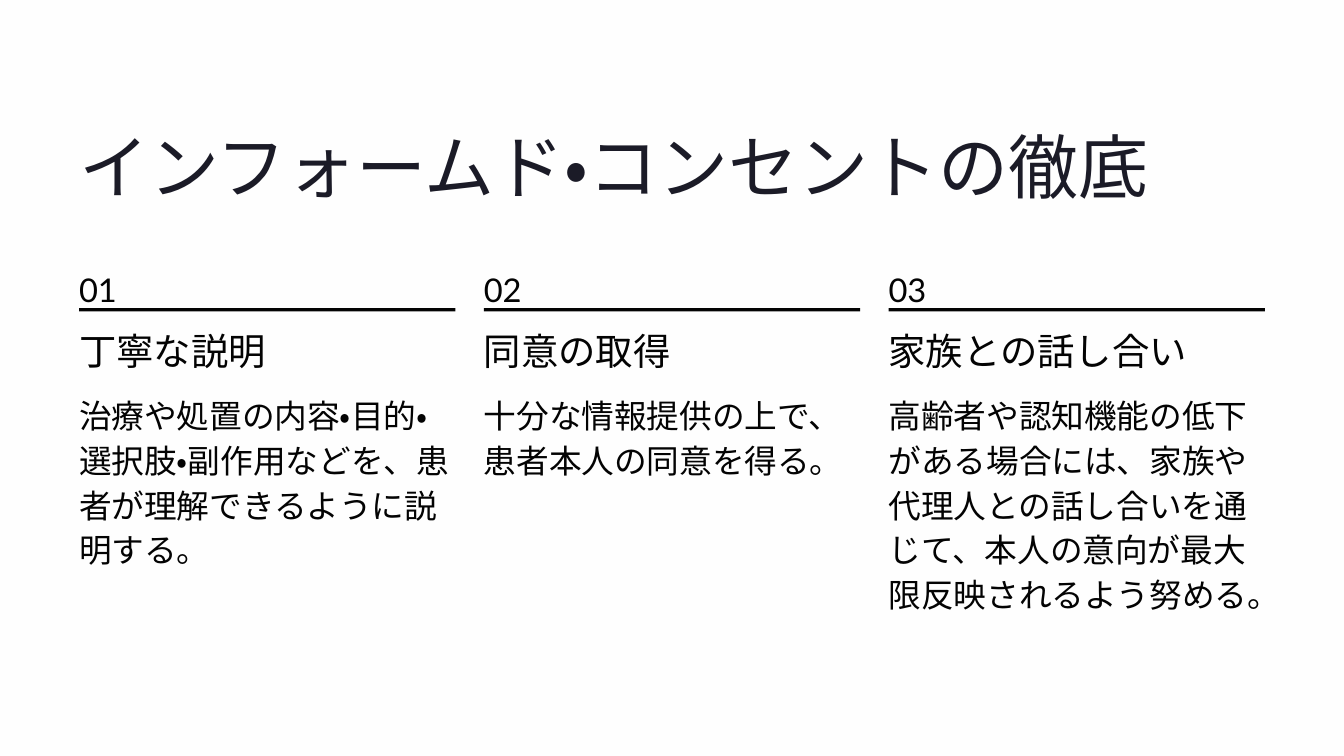
from pptx import Presentation
from pptx.dml.color import RGBColor
from pptx.enum.lang import MSO_LANGUAGE_ID
from pptx.enum.shapes import MSO_SHAPE
from pptx.enum.text import MSO_ANCHOR, MSO_AUTO_SIZE, PP_ALIGN
from pptx.util import Cm, Pt

RECTANGLE = MSO_SHAPE.RECTANGLE
TOP = MSO_ANCHOR.TOP
NO_FIT = MSO_AUTO_SIZE.NONE
LEFT = PP_ALIGN.LEFT
JAPANESE = MSO_LANGUAGE_ID.JAPANESE

# Content: heading, body, height of the body in lines
TITLE = "インフォームド・コンセントの徹底"
COLUMNS = [
    ("丁寧な説明",
     "治療や処置の内容・目的・選択肢・副作用などを、患者が理解できるように説明する。", 3),
    ("同意の取得",
     "十分な情報提供の上で、患者本人の同意を得る。", 2),
    ("家族との話し合い",
     "高齢者や認知機能の低下がある場合には、家族や代理人との話し合いを通じて、"
     "本人の意向が最大限反映されるよう努める。", 5),
]

# Look
COLORS = {"background": "FEFEFE", "title": "1B1B27", "text": "030303"}
STYLES = {
    "title": {"name": "Inter", "size": Pt(60), "spacing": Pt(75.5), "color": "title"},
    "number": {"name": "Lato", "size": Pt(28), "spacing": Pt(38.5), "color": "text"},
    "heading": {"name": "Inter", "size": Pt(32), "spacing": Pt(37.5), "color": "text"},
    "body": {"name": "Cabin", "size": Pt(28), "spacing": Pt(38.5), "color": "text"},
}

# Layout in centimetres
MARGIN = 2.39
COLUMN_WIDTH = 11.38
COLUMN_GAP = 0.86
BODY_LINE = 1.36


def color(name):
    return RGBColor.from_string(COLORS[name])


def place(shape, left, top, width, height):
    shape.left, shape.top = Cm(left), Cm(top)
    shape.width, shape.height = Cm(width), Cm(height)


def write(box, text, style_name, wrap=True):
    style = STYLES[style_name]
    frame = box.text_frame
    frame_format = {
        "margin_left": 0, "margin_right": 0, "margin_top": 0, "margin_bottom": 0,
        "vertical_anchor": TOP, "auto_size": NO_FIT, "word_wrap": wrap,
    }
    for key, value in frame_format.items():
        setattr(frame, key, value)
    para = frame.paragraphs[0]
    para.alignment = LEFT
    para.line_spacing = style["spacing"]
    span = para.add_run()
    span.text = text
    font_format = {"name": style["name"], "size": style["size"], "language_id": JAPANESE}
    for key, value in font_format.items():
        setattr(span.font, key, value)
    span.font.color.rgb = color(style["color"])


def add_text(page, text, style_name, left, top, height):
    box = page.shapes.add_textbox(Cm(left), Cm(top), Cm(COLUMN_WIDTH), Cm(height))
    write(box, text, style_name)


def add_rule(page, left, top):
    rule = page.shapes.add_shape(RECTANGLE, Cm(left), Cm(top), Cm(COLUMN_WIDTH), Cm(0.1))
    rule.shadow.inherit = False
    rule.fill.solid()
    rule.fill.fore_color.rgb = color("text")
    rule.line.fill.background()


def main():
    deck = Presentation()
    deck.slide_width, deck.slide_height = Cm(40.64), Cm(22.86)
    page = deck.slides.add_slide(deck.slide_layouts[5])
    page.background.fill.solid()
    page.background.fill.fore_color.rgb = color("background")

    # Title
    title = page.shapes.title
    place(title, MARGIN, 3.61, 33.96, 2.67)
    write(title, TITLE, "title", wrap=False)

    # Numbered columns
    for index, (heading, body, lines) in enumerate(COLUMNS):
        left = MARGIN + index * (COLUMN_WIDTH + COLUMN_GAP)
        add_text(page, f"{index + 1:02d}", "number", left, 7.98, 1.07)
        add_rule(page, left, 9.32)
        add_text(page, heading, "heading", left, 9.96, 1.32)
        add_text(page, body, "body", left, 11.79, lines * BODY_LINE)

    deck.save("out.pptx")


if __name__ == "__main__":
    main()
